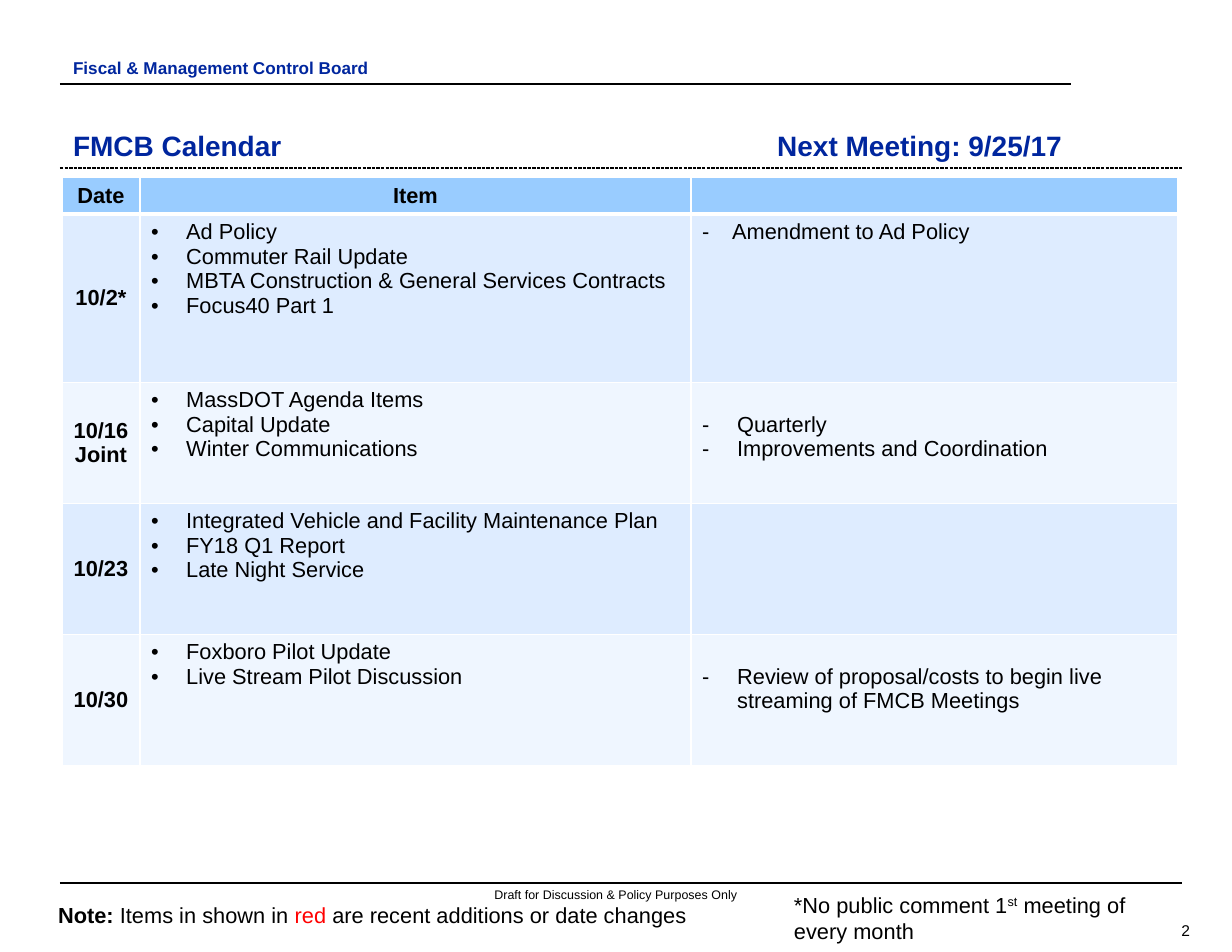
from dataclasses import dataclass

from lxml import etree
from pptx import Presentation
from pptx.dml.color import RGBColor
from pptx.enum.dml import MSO_LINE
from pptx.enum.shapes import MSO_CONNECTOR
from pptx.enum.text import MSO_ANCHOR, PP_ALIGN
from pptx.oxml.ns import qn
from pptx.util import Emu, Pt

STRAIGHT = MSO_CONNECTOR.STRAIGHT
DOTTED = MSO_LINE.SQUARE_DOT
TOP, MIDDLE, BOTTOM = MSO_ANCHOR.TOP, MSO_ANCHOR.MIDDLE, MSO_ANCHOR.BOTTOM
LEFT, CENTER, RIGHT = PP_ALIGN.LEFT, PP_ALIGN.CENTER, PP_ALIGN.RIGHT
PX_PER_INCH = 112


@dataclass(frozen=True)
class Theme:
    font: str = "Arial"
    ink: str = "000000"
    navy: str = "00269E"
    red: str = "FF0000"
    white: str = "FFFFFF"
    header: str = "99CCFF"
    bands: tuple = ("DEECFF", "EFF6FF")
    title: int = 18
    body: int = 14
    section: int = 11
    number: int = 10
    footer: int = 8


THEME = Theme()

COLUMNS = (78, 551, 487)
HEADER_HEIGHT = 37
HEADINGS = ("Date", "Item", "")
INDENT = 35
LINE = 24  # one line of table text

# date, row height, items, remarks, lines above the remarks, remark indent
MEETINGS = (
    ("10/2*", 168,
     ("Ad Policy", "Commuter Rail Update",
      "MBTA Construction & General Services Contracts", "Focus40 Part 1"),
     ("Amendment to Ad Policy",), 0, 30),
    ("10/16 Joint", 121,
     ("MassDOT Agenda Items", "Capital Update", "Winter Communications"),
     ("Quarterly", "Improvements and Coordination"), 1, INDENT),
    ("10/23", 131,
     ("Integrated Vehicle and Facility Maintenance Plan", "FY18 Q1 Report",
      "Late Night Service"),
     (), 0, INDENT),
    ("10/30", 131,
     ("Foxboro Pilot Update", "Live Stream Pilot Discussion"),
     ("Review of proposal/costs to begin live streaming of FMCB Meetings",),
     1, INDENT),
)


def px(length):
    return Emu(round(length * 914400 / PX_PER_INCH))


def add_span(para, text, size=THEME.body, color=THEME.ink, bold=False, baseline=0):
    span = para.add_run()
    span.text = text
    font = span.font
    font.name, font.size, font.bold = THEME.font, Pt(size), bold
    font.color.rgb = RGBColor.from_string(color)
    if baseline:
        span._r.get_or_add_rPr().set("baseline", str(baseline * 1000))


def add_text(page, left, top, width, height, spans, align=LEFT, anchor=TOP, inset=True):
    """Add a one-paragraph text box; each span is (text, font options)."""
    box = page.shapes.add_textbox(px(left), px(top), px(width), px(height))
    frame = box.text_frame
    frame.word_wrap = True
    frame.vertical_anchor = anchor
    if not inset:
        frame.margin_left = frame.margin_right = 0
        frame.margin_top = frame.margin_bottom = 0
    para = frame.paragraphs[0]
    para.alignment = align
    for text, options in spans:
        add_span(para, text, **options)


def add_rule(page, left, right, y, weight, dash=None):
    rule = page.shapes.add_connector(STRAIGHT, px(left), px(y), px(right), px(y))
    rule.line.width = Pt(weight)
    rule.line.color.rgb = RGBColor.from_string(THEME.ink)
    if dash:
        rule.line.dash_style = dash
    etree.SubElement(rule._element.spPr, qn("a:effectLst"))


def style_cell(cell, fill, top=1, bottom=1):
    """Fill a cell and give it white borders, weights in points."""
    properties = cell._tc.get_or_add_tcPr()
    for side, weight in (("L", 1), ("R", 1), ("T", top), ("B", bottom)):
        border = etree.SubElement(properties, qn(f"a:ln{side}"), w=str(Pt(weight)))
        paint = etree.SubElement(border, qn("a:solidFill"))
        etree.SubElement(paint, qn("a:srgbClr"), val=THEME.white)
    cell.fill.solid()
    cell.fill.fore_color.rgb = RGBColor.from_string(fill)


def write_label(cell, text):
    cell.vertical_anchor = MIDDLE
    para = cell.text_frame.paragraphs[0]
    para.alignment = CENTER
    if text:
        add_span(para, text, bold=True)
    else:
        etree.SubElement(para._p, qn("a:endParaRPr"), sz=str(THEME.body * 100))


def write_list(cell, items, bullet, indent):
    frame = cell.text_frame
    for index, item in enumerate(items):
        para = frame.add_paragraph() if index else frame.paragraphs[0]
        properties = para._p.get_or_add_pPr()
        properties.set("marL", str(px(indent)))
        properties.set("indent", str(-px(indent)))
        etree.SubElement(properties, qn("a:buFont"), typeface=THEME.font)
        etree.SubElement(properties, qn("a:buChar"), char=bullet)
        add_span(para, item)


def add_calendar(page, left, top):
    heights = [HEADER_HEIGHT] + [meeting[1] for meeting in MEETINGS]
    frame = page.shapes.add_table(len(heights), len(COLUMNS), px(left), px(top),
                                  px(sum(COLUMNS)), px(sum(heights)))
    table = frame.table
    table.horz_banding = False
    for column, width in zip(table.columns, COLUMNS):
        column.width = px(width)
    for row, height in zip(table.rows, heights):
        row.height = px(height)

    for cell, heading in zip(table.rows[0].cells, HEADINGS):
        style_cell(cell, THEME.header, bottom=3)
        write_label(cell, heading)

    for index, meeting in enumerate(MEETINGS):
        date, _, items, remarks, lines_above, indent = meeting
        cells = table.rows[index + 1].cells
        for cell in cells:
            style_cell(cell, THEME.bands[index % 2], top=1 if index else 3)
        date_cell, item_cell, remark_cell = cells
        write_label(date_cell, date)
        write_list(item_cell, items, "•", INDENT)
        write_list(remark_cell, remarks, "-", indent)
        if lines_above:
            remark_cell.margin_top = px(6 + lines_above * LINE)


def main():
    deck = Presentation()
    deck.slide_width, deck.slide_height = px(1232), px(952)
    page = deck.slides.add_slide(deck.slide_layouts[6])

    add_rule(page, 60, 1071, 84, 1)
    add_rule(page, 60, 1182, 168, 0.75, DOTTED)
    add_rule(page, 60, 1182, 883, 0.75)

    section = {"size": THEME.section, "color": THEME.navy, "bold": True}
    title = {"size": THEME.title, "color": THEME.navy, "bold": True}
    add_text(page, 62, 52, 420, 31, [("Fiscal & Management Control Board", section)])
    add_text(page, 62, 85, 561, 83, [("FMCB Calendar", title)], anchor=BOTTOM)
    add_text(page, 560, 87, 513, 81, [("Next Meeting: 9/25/17", title)], RIGHT, BOTTOM)

    add_calendar(page, 62, 177)

    add_text(page, 440, 887, 352, 15,
             [("Draft for Discussion & Policy Purposes Only", {"size": THEME.footer})],
             CENTER, inset=False)
    add_text(page, 47, 896, 653, 38, [
        ("Note: ", {"bold": True}),
        ("Items in shown in ", {}),
        ("red", {"color": THEME.red}),
        (" are recent additions or date changes", {}),
    ])
    add_text(page, 783, 886, 395, 64, [
        ("*No public comment 1", {}),
        ("st", {"baseline": 30}),
        (" meeting of every month", {}),
    ])
    add_text(page, 1098, 915, 103, 31, [("2", {"size": THEME.number})], RIGHT, MIDDLE)

    deck.save("out.pptx")


if __name__ == "__main__":
    main()
